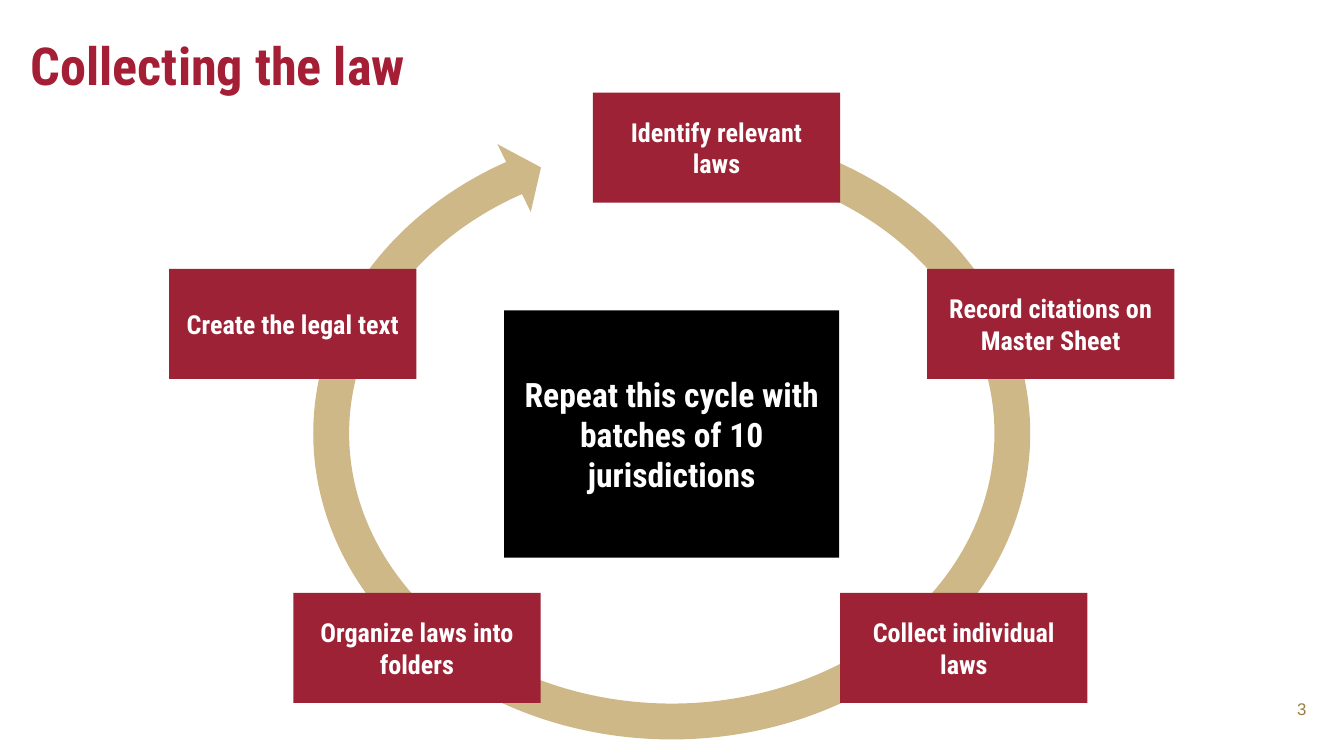
from pptx import Presentation
from pptx import util as u
from pptx.dml.color import RGBColor
from pptx.enum import shapes, text

HEADING_FONT = "Roboto Condensed"
MIDDLE = text.MSO_ANCHOR.MIDDLE
CENTER = text.PP_ALIGN.CENTER


def color(value):
    return RGBColor.from_string(value)


def points(box):
    return [u.Pt(length) for length in box]


def write_text(shape, content, size, font=HEADING_FONT, fill="FFFFFF", bold=True,
               align=CENTER, anchor=MIDDLE, inset=7.2):
    frame = shape.text_frame
    frame.word_wrap = True
    frame.vertical_anchor = anchor
    frame.margin_left = frame.margin_right = u.Pt(inset)
    frame.margin_top = frame.margin_bottom = u.Pt(min(inset, 7.2))
    paragraph = frame.paragraphs[0]
    paragraph.alignment = align
    run = paragraph.add_run()
    run.text = content
    run.font.name = font
    run.font.size = u.Pt(size)
    run.font.bold = bold
    run.font.color.rgb = color(fill)


def add_filled_shape(slide, kind, box, fill):
    shape = slide.shapes.add_shape(kind, *points(box))
    shape.shadow.inherit = False
    shape.fill.solid()
    shape.fill.fore_color.rgb = color(fill)
    shape.line.fill.background()
    return shape


def add_title(slide, box):
    title = slide.shapes.add_textbox(*points(box))
    write_text(title, "Collecting the law", 28, fill="A41E35",
               align=text.PP_ALIGN.LEFT, anchor=text.MSO_ANCHOR.TOP)


def add_slide_number(slide, box):
    number = slide.shapes.add_textbox(*points(box))
    write_text(number, "3", 9, font="Arial", fill="9A7E40", bold=False,
               align=text.PP_ALIGN.RIGHT)


def add_cycle(slide, box):
    left, top, width, height = box
    step_width, step_height = 132.5, 59
    center_x = left + width / 2

    arrow = add_filled_shape(slide, shapes.MSO_SHAPE.CIRCULAR_ARROW,
                             (left, top, width, height), "CEB888")
    for index, value in enumerate((0.055, 3.307, 142.983, 170.756, 0.058)):
        arrow.adjustments[index] = value

    hub_width, hub_height = 179.5, 132.5
    hub = add_filled_shape(slide, shapes.MSO_SHAPE.RECTANGLE,
                           (center_x - hub_width / 2, top + 108.7, hub_width, hub_height),
                           "000000")
    write_text(hub, "Repeat this cycle with batches of 10 jurisdictions", 18)

    steps = [
        ("Identify relevant laws", 24, -8),
        ("Record citations on Master Sheet", 203, 86.4),
        ("Collect individual laws", 156.5, 260),
        ("Organize laws into folders", -136.5, 260),
        ("Create the legal text", -203, 86.4),
    ]
    for label, offset_x, offset_y in steps:
        step = add_filled_shape(slide, shapes.MSO_SHAPE.RECTANGLE,
                                (center_x + offset_x - step_width / 2, top + offset_y,
                                 step_width, step_height), "9D2235")
        write_text(step, label, 14)


def main():
    presentation = Presentation()
    presentation.slide_width = u.Pt(720)
    presentation.slide_height = u.Pt(405)
    slide = presentation.slides.add_slide(presentation.slide_layouts[6])
    add_slide_number(slide, (675.5, 366.5, 31.5, 26.5))
    add_title(slide, (9.5, 10.8, 659.5, 45.5))
    add_cycle(slide, (157.2, 57.6, 405.4, 349.2))
    presentation.save("out.pptx")


if __name__ == "__main__":
    main()
